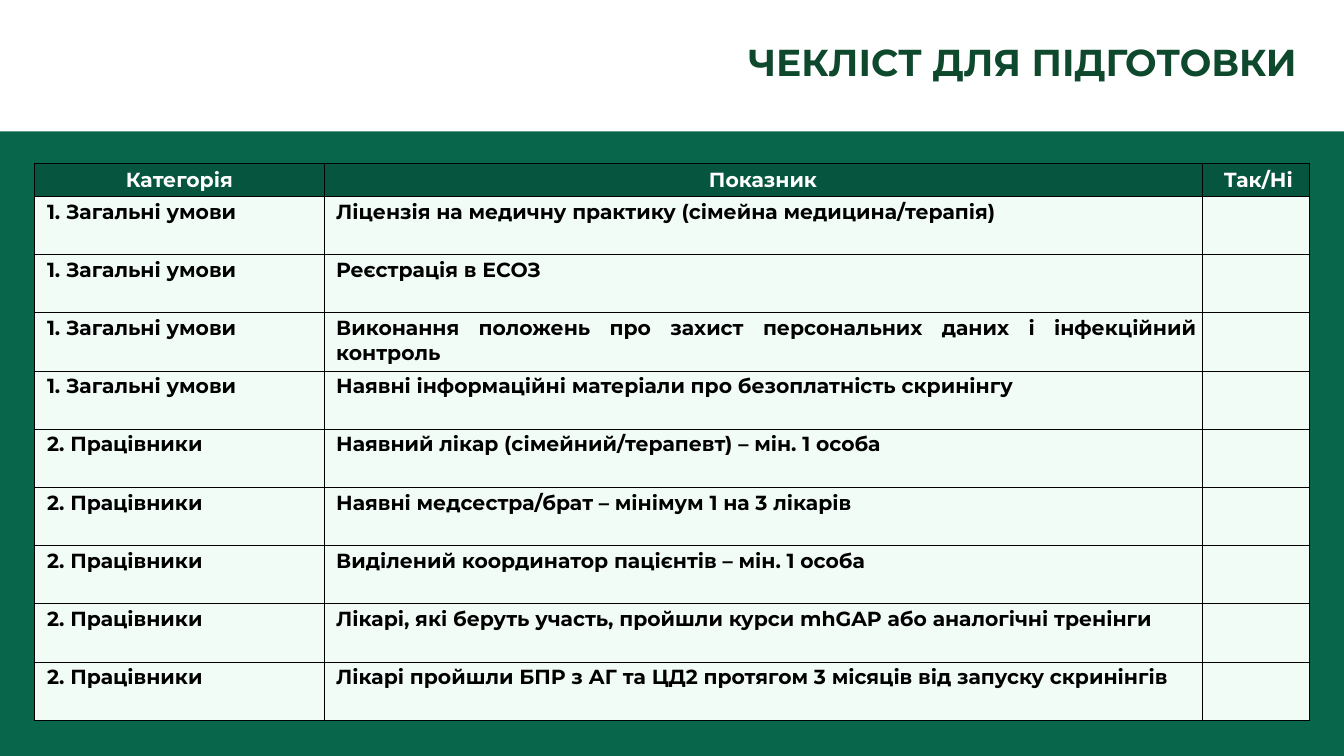
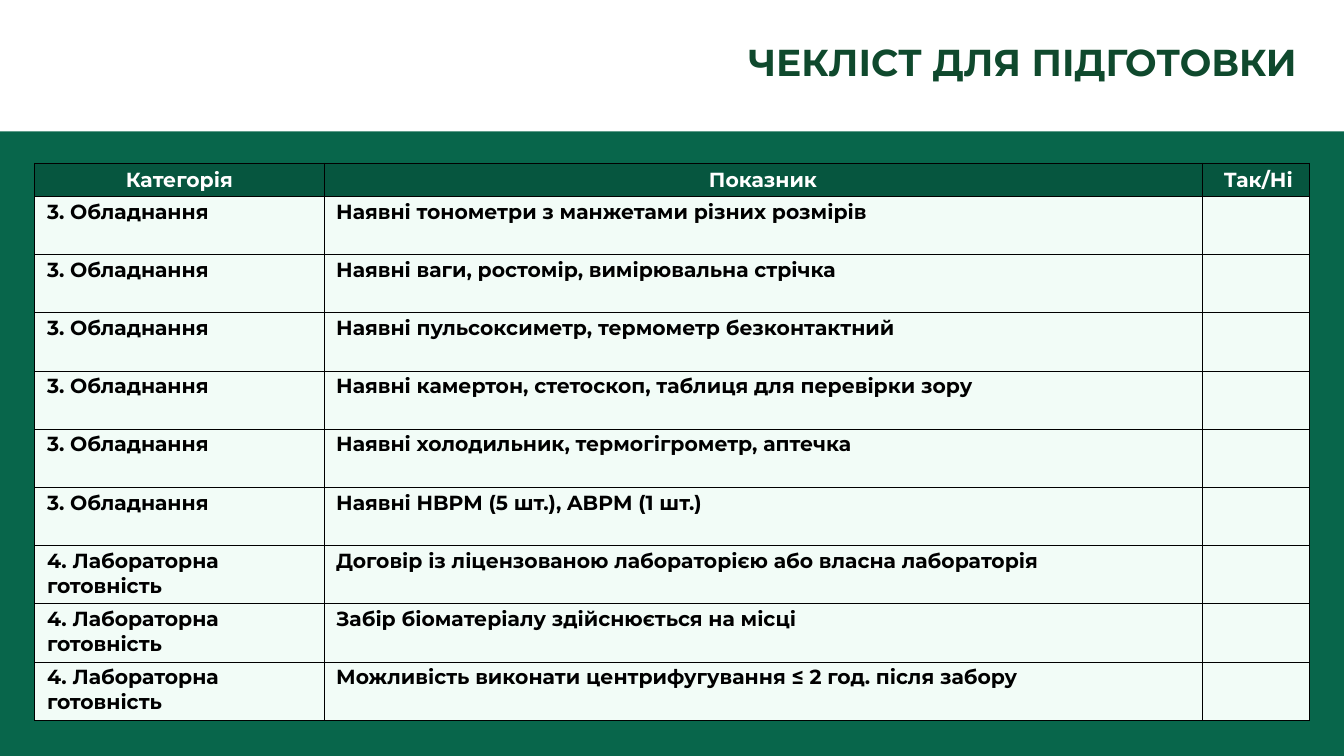
from itertools import chain

from lxml.etree import SubElement
from pptx import Presentation
from pptx.dml.color import RGBColor
from pptx.enum.shapes import MSO_SHAPE as Shape
from pptx.enum.text import MSO_ANCHOR as Anchor, PP_ALIGN as Align
from pptx.oxml.ns import qn
from pptx.util import Pt

COLORS = {
    "background": "08664B",
    "band": "FFFFFF",
    "title": "0F492D",
    "header": "06563F",
    "header_text": "FFFFFF",
    "body": "F2FCF7",
    "body_text": "000000",
    "border": "000000",
}
FONT = "Montserrat"
WIDTH, HEIGHT = 1583.28, 890.64
TITLE = "ЧЕКЛІСТ ДЛЯ ПІДГОТОВКИ"
HEADINGS = ("Категорія", "Показник", "Так/Ні")
COLUMNS = (340.6, 1034.6, 126.7)
HEADER_HEIGHT, ROW_HEIGHT = 39, 68.6

# Each checklist: alignment of the category column, then indicators by category
CHECKLISTS = [
    (Align.JUSTIFY, {
        "1. Загальні умови": [
            "Ліцензія на медичну практику (сімейна медицина/терапія)",
            "Реєстрація в ЕСОЗ",
            "Виконання положень про захист персональних даних і інфекційний контроль",
            "Наявні інформаційні матеріали про безоплатність скринінгу",
        ],
        "2. Працівники": [
            "Наявний лікар (сімейний/терапевт) – мін. 1 особа",
            "Наявні медсестра/брат – мінімум 1 на 3 лікарів",
            "Виділений координатор пацієнтів – мін. 1 особа",
            "Лікарі, які беруть участь, пройшли курси mhGAP або аналогічні тренінги",
            "Лікарі пройшли БПР з АГ та ЦД2 протягом 3 місяців від запуску скринінгів",
        ],
    }),
    (Align.LEFT, {
        "3. Обладнання": [
            "Наявні тонометри з манжетами різних розмірів",
            "Наявні ваги, ростомір, вимірювальна стрічка",
            "Наявні пульсоксиметр, термометр безконтактний",
            "Наявні камертон, стетоскоп, таблиця для перевірки зору",
            "Наявні холодильник, термогігрометр, аптечка",
            "Наявні HBPM (5 шт.), ABPM (1 шт.)",
        ],
        "4. Лабораторна готовність": [
            "Договір із ліцензованою лабораторією або власна лабораторія",
            "Забір біоматеріалу здійснюється на місці",
            "Можливість виконати центрифугування ≤ 2 год. після забору",
        ],
    }),
]


def color(name):
    return RGBColor.from_string(COLORS[name])


class Deck:
    """Holds the shared style and the current slide."""

    def __init__(self):
        self.prs = Presentation()
        self.prs.slide_width, self.prs.slide_height = Pt(WIDTH), Pt(HEIGHT)
        self.slide = None

    def new_slide(self):
        self.slide = self.prs.slides.add_slide(self.prs.slide_layouts[6])
        background = self.slide.background.fill
        background.solid()
        background.fore_color.rgb = color("background")

    def set_text(self, paragraph, text, size, ink, align=Align.LEFT):
        paragraph.text = text
        paragraph.alignment = align
        font = paragraph.font
        font.name, font.size, font.bold = FONT, Pt(size), True
        font.color.rgb = color(ink)

    def band(self, height):
        band = self.slide.shapes.add_shape(Shape.RECTANGLE, 0, 0, Pt(WIDTH), Pt(height))
        band.shadow.inherit = False
        band.fill.solid()
        band.fill.fore_color.rgb = color("band")
        band.line.fill.background()

    def title(self, text):
        box = self.slide.shapes.add_textbox(Pt(881.3), Pt(46), Pt(662.4), Pt(84.2))
        frame = box.text_frame
        frame.word_wrap = True
        frame.vertical_anchor = Anchor.TOP
        frame.margin_left = frame.margin_right = 0
        frame.margin_top = frame.margin_bottom = 0
        self.set_text(frame.paragraphs[0], text, 44.1, "title")

    def style_cell(self, cell, fill, side, top):
        cell.margin_left = cell.margin_right = Pt(side)
        cell.margin_top = cell.margin_bottom = Pt(top)
        # Borders come before the fill in the cell properties
        properties = cell._tc.get_or_add_tcPr()
        for edge in ("a:lnL", "a:lnR", "a:lnT", "a:lnB"):
            line = SubElement(properties, qn(edge), w=str(Pt(1)))
            solid = SubElement(line, qn("a:solidFill"))
            SubElement(solid, qn("a:srgbClr"), val=COLORS["border"])
        cell.fill.solid()
        cell.fill.fore_color.rgb = color(fill)

    def cell_text(self, cell, text, ink, align, margin=0, indent=0):
        paragraph = cell.text_frame.paragraphs[0]
        properties = paragraph._p.get_or_add_pPr()
        properties.set("marL", str(Pt(margin)))
        properties.set("indent", str(Pt(indent)))
        self.set_text(paragraph, text, 24, ink, align)

    def checklist(self, rows, category_align):
        height = HEADER_HEIGHT + ROW_HEIGHT * len(rows)
        table = self.slide.shapes.add_table(
            len(rows) + 1, len(COLUMNS), Pt(41), Pt(192.2), Pt(sum(COLUMNS)), Pt(height)
        ).table
        table.horz_banding = False
        for column, width in zip(table.columns, COLUMNS):
            column.width = Pt(width)

        # Header row
        table.rows[0].height = Pt(HEADER_HEIGHT)
        for i, heading in enumerate(HEADINGS):
            cell = table.cell(0, i)
            self.style_cell(cell, "header", 5, 5)
            last = i == len(HEADINGS) - 1
            self.cell_text(cell, heading, "header_text", Align.CENTER, indent=5.8 if last else 0)

        # Indicators, with an empty answer column
        for r, texts in enumerate(rows, 1):
            table.rows[r].height = Pt(ROW_HEIGHT)
            for i in range(len(COLUMNS)):
                self.style_cell(table.cell(r, i), "body", 7.2, 3.6)
            for i, (text, align) in enumerate(zip(texts, (category_align, Align.JUSTIFY))):
                self.cell_text(table.cell(r, i), text, "body_text", align, margin=7.2)


def main():
    deck = Deck()
    for category_align, categories in CHECKLISTS:
        deck.new_slide()
        deck.band(154.8)
        deck.title(TITLE)
        rows = list(chain.from_iterable(
            [(category, indicator) for indicator in indicators]
            for category, indicators in categories.items()
        ))
        deck.checklist(rows, category_align)
    deck.prs.save("out.pptx")


if __name__ == "__main__":
    main()
